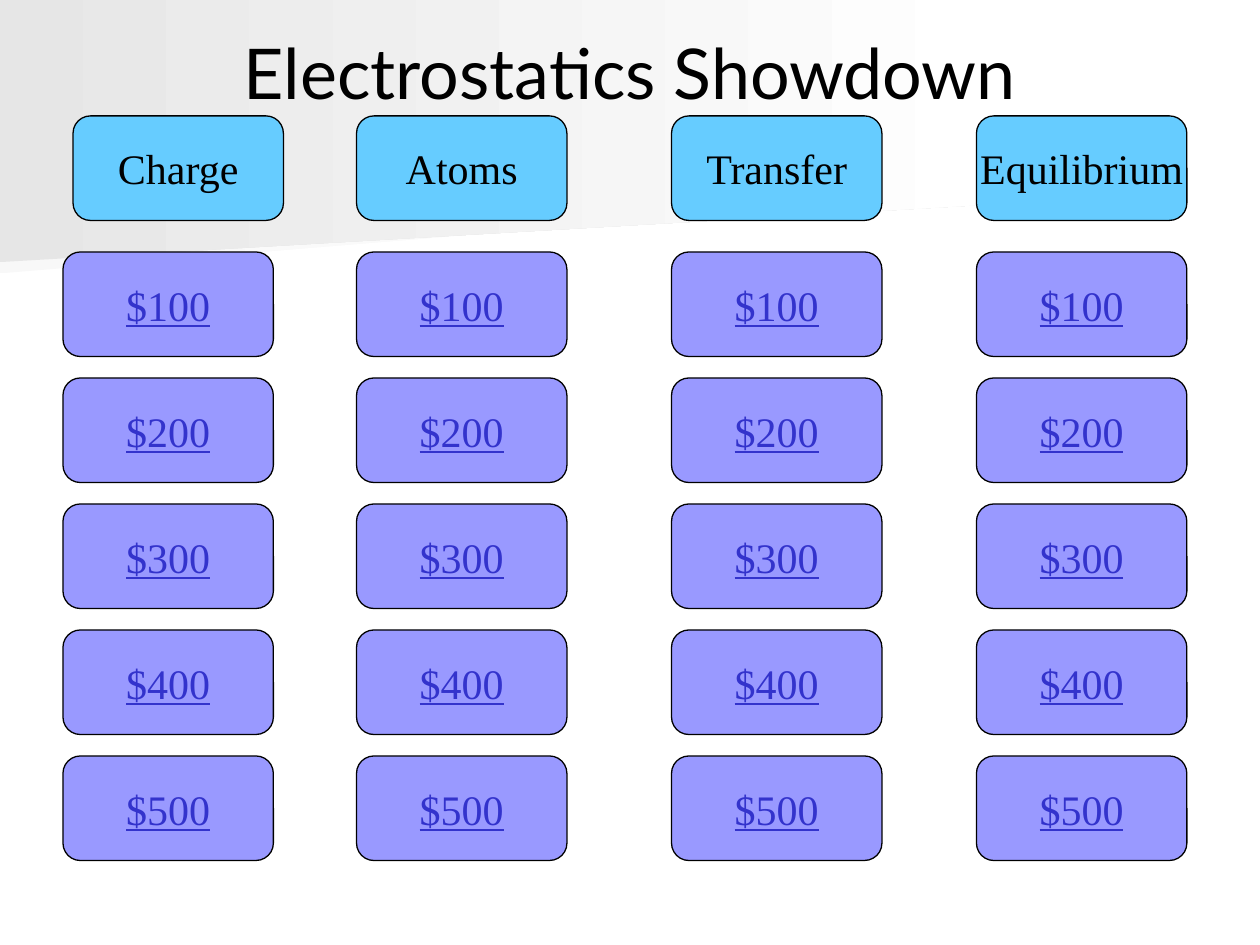
from dataclasses import dataclass

from pptx import Presentation
from pptx.dml.color import RGBColor
from pptx.enum.shapes import MSO_SHAPE
from pptx.enum.text import MSO_ANCHOR, PP_ALIGN
from pptx.util import Inches, Pt


@dataclass(frozen=True)
class Theme:
    ink: str = "000000"
    header: str = "66CCFF"
    prize: str = "9999FF"
    prize_text: str = "3333CC"
    fade: str = "FFFFFF"
    title_font: str = "Lato"
    tile_font: str = "Times New Roman"
    title_size: int = 40
    tile_size: int = 24
    outline: float = 0.75


@dataclass(frozen=True)
class Category:
    name: str
    left: float
    header_offset: float = 0


@dataclass(frozen=True)
class Band:
    color: str
    points: tuple[tuple[float, float], ...]


THEME = Theme()
CATEGORIES = (
    Category("Charge", 0.5, header_offset=0.08),
    Category("Atoms", 2.83),
    Category("Transfer", 5.33),
    Category("Equilibrium", 7.75),
)
BANDS = (
    Band("F8F8F8", ((7.78, 1.53), (0, 2.17), (0, 1.01), (7.79, 1.01), (7.78, 1.28))),
    Band("E6E6E6", ((7.92, 1.62), (0, 2.08), (0, 0), (7.92, 0))),
)
PRIZES = range(100, 600, 100)
TILE_WIDTH, TILE_HEIGHT = 1.67, 0.83
HEADER_TOP, FIRST_PRIZE_TOP, ROW_STEP = 0.92, 2, 1


def write_text(shape, text: str, *, font: str, size: int, color: str,
               underline: bool = False, wrap: bool = False) -> None:
    frame = shape.text_frame
    frame.word_wrap = wrap
    frame.vertical_anchor = MSO_ANCHOR.MIDDLE
    para = frame.paragraphs[0]
    para.alignment = PP_ALIGN.CENTER
    span = para.add_run()
    span.text = text
    span.font.name = font
    span.font.size = Pt(size)
    span.font.color.rgb = RGBColor.from_string(color)
    if underline:
        span.font.underline = True


def draw_band(slide, band: Band) -> None:
    """Draw a background wedge that fades out to the right."""
    start, *rest = [(Inches(x), Inches(y)) for x, y in band.points]
    builder = slide.shapes.build_freeform(*start)
    builder.add_line_segments(rest, close=True)
    shape = builder.convert_to_shape()
    shape.shadow.inherit = False
    shape.line.fill.background()
    shape.fill.gradient()
    shape.fill.gradient_angle = 0
    for stop, color in zip(shape.fill.gradient_stops, (band.color, THEME.fade)):
        stop.color.rgb = RGBColor.from_string(color)


def draw_tile(slide, text: str, left: float, top: float, *, fill: str,
              color: str, underline: bool = False) -> None:
    tile = slide.shapes.add_shape(
        MSO_SHAPE.FLOWCHART_ALTERNATE_PROCESS,
        Inches(left), Inches(top), Inches(TILE_WIDTH), Inches(TILE_HEIGHT))
    tile.shadow.inherit = False
    tile.fill.solid()
    tile.fill.fore_color.rgb = RGBColor.from_string(fill)
    tile.line.color.rgb = RGBColor.from_string(THEME.ink)
    tile.line.width = Pt(THEME.outline)
    write_text(tile, text, font=THEME.tile_font, size=THEME.tile_size,
               color=color, underline=underline)


def draw_category(slide, category: Category) -> None:
    draw_tile(slide, category.name, category.left + category.header_offset,
              HEADER_TOP, fill=THEME.header, color=THEME.ink)
    for row, prize in enumerate(PRIZES):
        draw_tile(slide, f"${prize}", category.left,
                  FIRST_PRIZE_TOP + row * ROW_STEP, fill=THEME.prize,
                  color=THEME.prize_text, underline=True)


def main() -> None:
    deck = Presentation()
    deck.slide_width, deck.slide_height = Inches(10), Inches(7.5)
    slide = deck.slides.add_slide(deck.slide_layouts[6])
    for band in BANDS:
        draw_band(slide, band)
    title = slide.shapes.add_textbox(Inches(0.5), Inches(0.3), Inches(9), Inches(0.53))
    write_text(title, "Electrostatics Showdown", font=THEME.title_font,
               size=THEME.title_size, color=THEME.ink, wrap=True)
    for category in CATEGORIES:
        draw_category(slide, category)
    deck.save("out.pptx")


if __name__ == "__main__":
    main()
